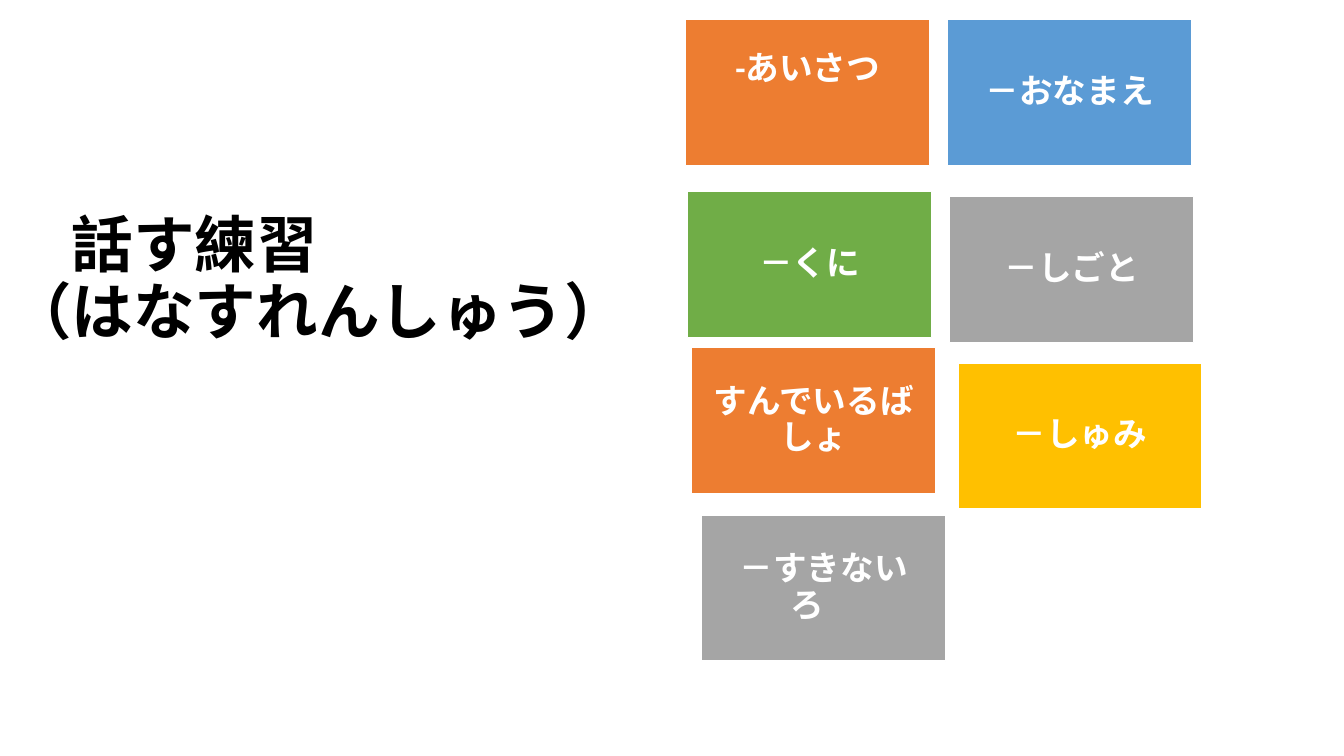
import dataclasses

import pptx
import pptx.dml.color
import pptx.enum.shapes
import pptx.enum.text
import pptx.slide
import pptx.text.text
import pptx.util

Inches = pptx.util.Inches
Pt = pptx.util.Pt
Align = pptx.enum.text.PP_ALIGN

BLACK, WHITE = "000000", "FFFFFF"
ORANGE, BLUE, GREEN = "ED7D31", "5B9BD5", "70AD47"
GRAY, GOLD = "A5A5A5", "FFC000"

FONT = "Calibri"
CARD_W, CARD_H = 2.42, 1.45
PAD = 0.1


@dataclasses.dataclass
class Card:
    text: str
    left: float
    top: float
    fill: str
    lift: float = 0  # extra bottom inset that raises the text


# Cards by row, left to right; each sits slightly off the grid
CARDS = [
    Card("-あいさつ", 6.8, 0.19, ORANGE, lift=0.46),
    Card("－おなまえ", 9.4, 0.19, BLUE),
    Card("－くに", 6.82, 1.9, GREEN),
    Card("－しごと", 9.42, 1.95, GRAY),
    Card("すんでいるばしょ", 6.86, 3.45, ORANGE),
    Card("－しゅみ", 9.5, 3.6, GOLD),
    Card("－すきないろ　", 6.96, 5.11, GRAY),
]


def color(code: str) -> pptx.dml.color.RGBColor:
    return pptx.dml.color.RGBColor.from_string(code)


def write(frame: pptx.text.text.TextFrame, text: str, size: int,
          code: str, align: Align) -> None:
    frame.text = text
    frame.word_wrap = True
    frame.auto_size = pptx.enum.text.MSO_AUTO_SIZE.NONE
    frame.vertical_anchor = pptx.enum.text.MSO_ANCHOR.MIDDLE
    for para in frame.paragraphs:
        para.alignment = align
        para.line_spacing = 0.9
        for run in para.runs:
            run.font.name = FONT
            run.font.size = Pt(size)
            run.font.bold = True
            run.font.color.rgb = color(code)


def draw_title(slide: pptx.slide.Slide, text: str) -> None:
    title = slide.shapes.title
    title.left, title.top = Inches(0), Inches(0.18)
    title.width, title.height = Inches(6.38), Inches(5.95)
    title.text_frame.margin_bottom = Inches(0.78)
    write(title.text_frame, text, 44, BLACK, Align.LEFT)


def draw_card(slide: pptx.slide.Slide, card: Card) -> None:
    box = slide.shapes.add_shape(
        pptx.enum.shapes.MSO_SHAPE.RECTANGLE, Inches(card.left),
        Inches(card.top), Inches(CARD_W), Inches(CARD_H))
    box.shadow.inherit = False
    box.fill.solid()
    box.fill.fore_color.rgb = color(card.fill)
    box.line.color.rgb = color(WHITE)
    box.line.width = Pt(1)
    frame = box.text_frame
    frame.margin_left = frame.margin_right = frame.margin_top = Inches(PAD)
    frame.margin_bottom = Inches(PAD + card.lift)
    write(frame, card.text, 24, WHITE, Align.CENTER)


def main() -> None:
    deck = pptx.Presentation()
    deck.slide_width, deck.slide_height = Inches(13.33), Inches(7.5)
    slide = deck.slides.add_slide(deck.slide_layouts.get_by_name("Title Only"))

    # Title on the left, broken into two lines
    draw_title(slide, "　話す練習\v（はなすれんしゅう）")

    # Topic cards on the right
    for card in CARDS:
        draw_card(slide, card)

    deck.save("out.pptx")


if __name__ == "__main__":
    main()
